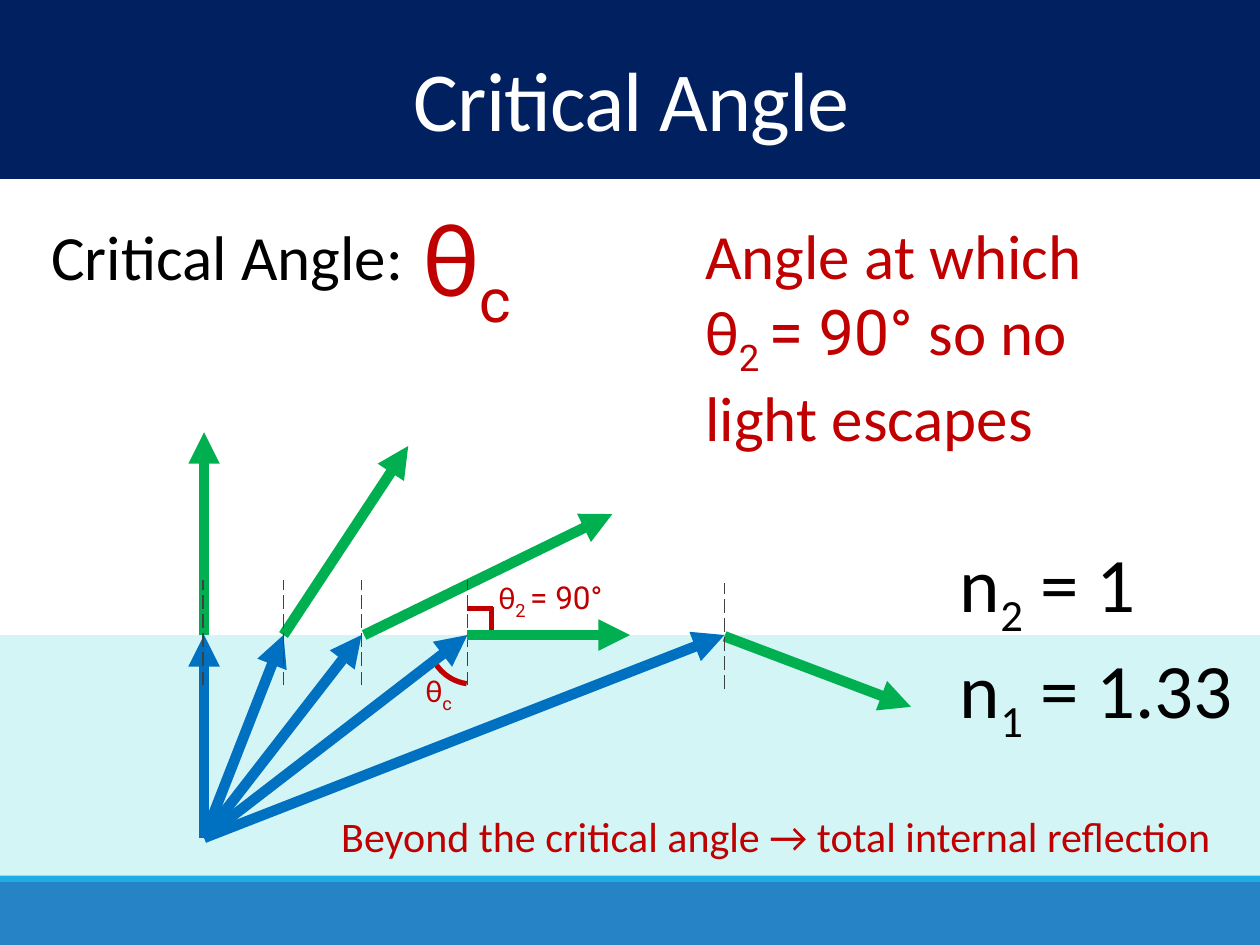
from pptx import Presentation
from pptx.dml.color import RGBColor
from pptx.enum.dml import MSO_LINE
from pptx.enum.shapes import MSO_CONNECTOR, MSO_SHAPE
from pptx.enum.text import MSO_ANCHOR, MSO_AUTO_SIZE, PP_ALIGN
from pptx.oxml.ns import qn
from pptx.util import Inches, Pt

RECT, ARC, STRAIGHT = MSO_SHAPE.RECTANGLE, MSO_SHAPE.ARC, MSO_CONNECTOR.STRAIGHT
DASH, CENTER, MIDDLE = MSO_LINE.LONG_DASH, PP_ALIGN.CENTER, MSO_ANCHOR.MIDDLE
FIT = MSO_AUTO_SIZE.SHAPE_TO_FIT_TEXT

W, H = 10, 7.5
SURFACE = 5.04          # height of the water surface
SOURCE = (1.62, 6.65)   # where all light rays start
HALF_NORMAL = 0.42

THEME = {
    "navy": "002060", "footer": "2683C6", "rule": "1CADE4", "water": "D3F5F6",
    "incident": "0070C0", "refracted": "00B050", "normal": "404040",
    "accent": "C00000", "text": "000000", "light": "FFFFFF",
    "body": "Calibri", "symbol": "Roboto",
    "title": 48, "theta": 60, "index": 44, "lead": 36, "note": 24, "label": 18,
    "ray_w": 6, "mark_w": 3, "normal_w": 1,
}

# Content: bands as (top, height, colour)
BANDS = [(7, 0.5, "footer"), (6.93, 0.07, "rule"), (0, 1.42, "navy")]
WATER = (SURFACE, 1.91, "water")

# Rays: end points of the light below and paths of the light above the surface
INCIDENT = [(1.62, SURFACE), (2.25, SURFACE), (2.87, SURFACE), (5.75, SURFACE)]
REFRACTED = [
    ((1.62, SURFACE), (1.62, 3.43)),
    ((2.25, SURFACE), (3.24, 3.54)),
    ((2.89, SURFACE), (4.86, 4.08)),
    ((5.75, 5.05), (7.23, 5.61)),
]
CRITICAL = (3.71, SURFACE)
GRAZING_END = (W / 2, SURFACE)
NORMALS = [(1.61, 5.02), (2.25, 5.02), (2.87, 5.02), (3.71, 5.02), (5.75, 5.05)]
RIGHT_ANGLE = [((3.71, 4.83), (3.91, 4.83)), ((3.9, 4.82), (3.9, 5.02))]
ANGLE_ARC = (3.4, 4.72, 0.71, 0.71)

# Texts: box, size, colour, wrap, runs as (text, font, is subscript)
B, S = "body", "symbol"
TEXTS = [
    ((0.31, 1.68, 3.1, 0.71), "lead", "text", False, [("Critical Angle:", B, False)]),
    ((7.52, 4.2, 1.63, 0.84), "index", "text", False,
     [("n", B, False), ("2", B, True), (" = 1", B, False)]),
    ((7.52, 5.04, 2.41, 0.84), "index", "text", False,
     [("n", B, False), ("1", B, True), (" = 1.33", B, False)]),
    ((3.26, 1.47, 0.91, 1.11), "theta", "accent", False,
     [("θ", B, False), ("c", S, True)]),
    ((5.5, 1.67, 3.68, 1.92), "lead", "accent", True,
     [("Angle at which θ", B, False), ("2 ", S, True), ("= 90° ", S, False),
      ("so no light escapes", B, False)]),
    ((3.86, 4.54, 1.13, 0.4), "label", "accent", False,
     [("θ", B, False), ("2 ", S, True), ("= 90°", S, False)]),
    ((3.28, 5.28, 0.41, 0.4), "label", "accent", False,
     [("θ", B, False), ("c", S, True)]),
    ((2.61, 6.38, 7.34, 0.5), "note", "accent", True,
     [("Beyond the critical angle → total internal reflection", B, False)]),
]
TITLE = ((0.03, 0.42, 9.97, 0.84), "title", "light", True,
         [("Critical Angle", B, False)])


def color(name):
    return RGBColor.from_string(THEME[name])


def inches(values):
    return [Inches(v) for v in values]


def add_band(shapes, top, height, fill):
    sp = shapes.add_shape(RECT, *inches((0, top, W, height)))
    sp.shadow.inherit = False
    sp.fill.solid()
    sp.fill.fore_color.rgb = color(fill)
    sp.line.fill.background()
    return sp


def add_line(shapes, start, end, name, width, arrow=False, dash=None):
    cx = shapes.add_connector(STRAIGHT, *inches((*start, *end)))
    cx.line.color.rgb = color(name)
    cx.line.width = Pt(THEME[width])
    if dash:
        cx.line.dash_style = dash
    if arrow:
        ln = cx.line._get_or_add_ln()
        ln.append(ln.makeelement(qn("a:tailEnd"), {"type": "triangle"}))
    spPr = cx._element.spPr
    spPr.append(spPr.makeelement(qn("a:effectLst"), {}))
    return cx


def add_text(shapes, box, size, fill, wrap, runs):
    tf = shapes.add_textbox(*inches(box)).text_frame
    tf.word_wrap = wrap
    tf.auto_size = FIT
    p = tf.paragraphs[0]
    for text, font, subscript in runs:
        r = p.add_run()
        r.text = text
        for key, value in {"size": Pt(THEME[size]), "name": THEME[font]}.items():
            setattr(r.font, key, value)
        r.font.color.rgb = color(fill)
        if subscript:
            r.font._element.set("baseline", "-25000")
    return tf


def main():
    prs = Presentation()
    prs.slide_width, prs.slide_height = inches((W, H))
    shapes = prs.slides.add_slide(prs.slide_layouts[6]).shapes

    # Background bands and water
    for band in BANDS:
        add_band(shapes, *band)
    water = add_band(shapes, *WATER)

    # Title
    tf = add_text(shapes, *TITLE)
    tf.auto_size = MSO_AUTO_SIZE.NONE
    tf.vertical_anchor = MIDDLE
    p = tf.paragraphs[0]
    p.alignment, p.line_spacing = CENTER, 0.85
    p.runs[0].font._element.set("spc", "-50")

    # Light rays and surface normals
    for end in INCIDENT:
        add_line(shapes, SOURCE, end, "incident", "ray_w", arrow=True)
    for start, end in REFRACTED:
        add_line(shapes, start, end, "refracted", "ray_w", arrow=True)
    for x, y in NORMALS:
        add_line(shapes, (x, y + HALF_NORMAL), (x, y - HALF_NORMAL),
                 "normal", "normal_w", dash=DASH)

    # Right angle, grazing ray, critical angle and critical ray
    corner = shapes.add_group_shape().shapes
    for start, end in RIGHT_ANGLE:
        add_line(corner, start, end, "accent", "mark_w")
    grazing = add_line(shapes, CRITICAL, GRAZING_END, "refracted", "ray_w", arrow=True)
    grazing.end_connect(water, 0)
    arc = shapes.add_shape(ARC, *inches(ANGLE_ARC))
    arc.shadow.inherit = False
    arc.fill.background()
    arc.line.color.rgb = color("accent")
    arc.line.width = Pt(THEME["mark_w"])
    arc.adjustments[0], arc.adjustments[1] = 58.98, 90.3
    add_line(shapes, SOURCE, CRITICAL, "incident", "ray_w", arrow=True)

    # Texts and labels
    for text in TEXTS:
        add_text(shapes, *text)

    prs.save("out.pptx")


if __name__ == "__main__":
    main()
